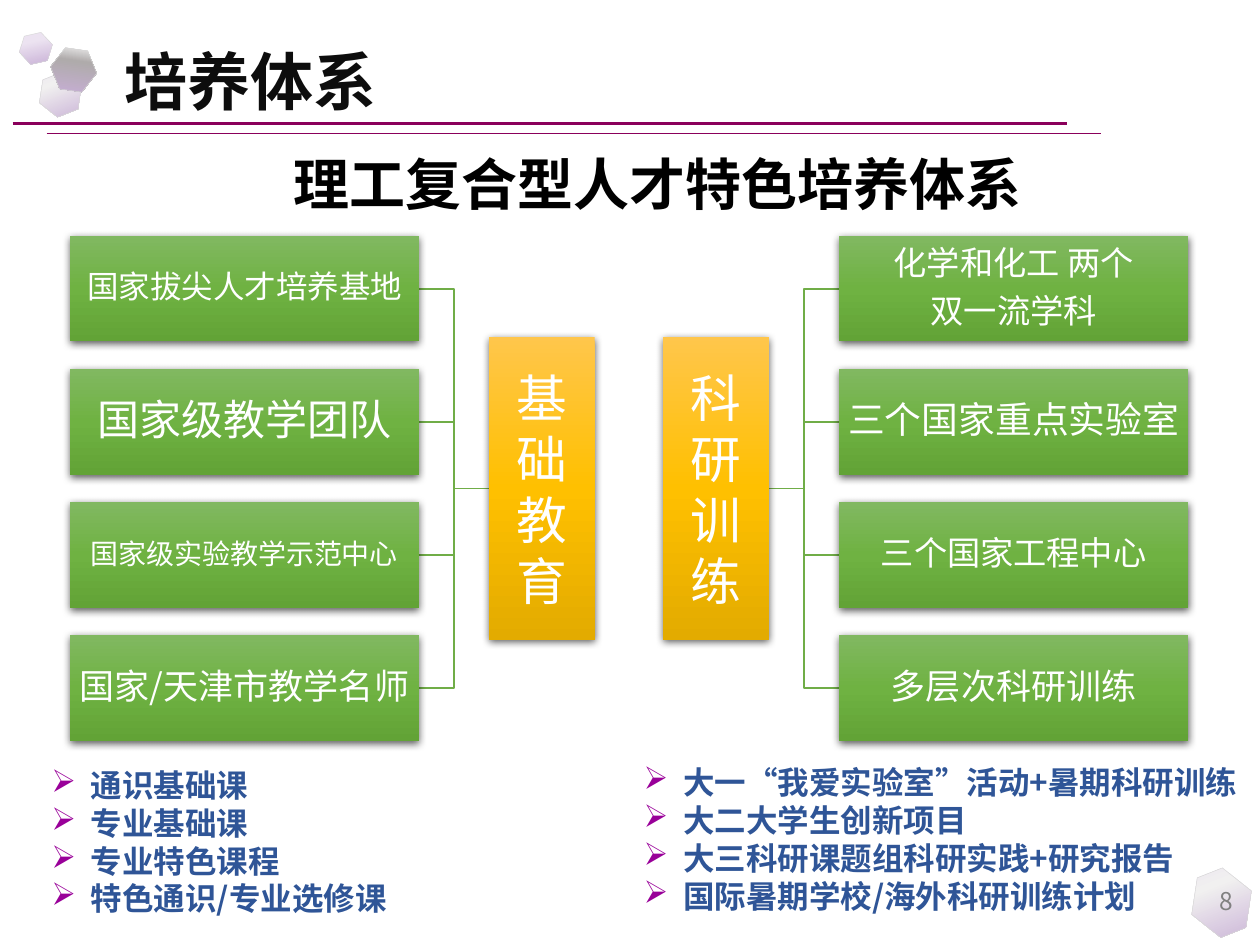
"""Build the training system slide."""
from dataclasses import dataclass

import pptx
import pptx.dml.color
import pptx.enum.shapes
import pptx.enum.text
import pptx.oxml
import pptx.oxml.ns
import pptx.util
from lxml import etree

Pt = pptx.util.Pt
RGB = pptx.dml.color.RGBColor
qn = pptx.oxml.ns.qn
PP_ALIGN = pptx.enum.text.PP_ALIGN
ANCHOR = pptx.enum.text.MSO_ANCHOR
SHAPE = pptx.enum.shapes.MSO_SHAPE

FONT = "Noto Sans CJK SC"
WHITE = RGB(0xFF, 0xFF, 0xFF)
BLACK = RGB(0x00, 0x00, 0x00)
TITLE_INK = RGB(0x0D, 0x0D, 0x0D)
NUMBER_GREY = RGB(0x80, 0x80, 0x80)
PLUM = RGB(0x8A, 0x00, 0x5B)
BULLET_PURPLE = RGB(0x99, 0x00, 0x99)
COURSE_BLUE = RGB(0x2F, 0x55, 0x97)
BRANCH_GREEN = RGB(0x70, 0xAD, 0x47)
HEXAGON_EDGE = RGB(0xD7, 0xD7, 0xD7)
LILAC = RGB(0xEC, 0xE3, 0xF1)
MIST = RGB(0xF1, 0xF0, 0xF0)
VIOLET = RGB(0xC7, 0xAE, 0xD5)
GREEN_STOPS = ((0, RGB(0x81, 0xB8, 0x61)), (50, RGB(0x6F, 0xB2, 0x42)), (100, RGB(0x62, 0xA3, 0x36)))
GOLD_STOPS = ((0, RGB(0xFF, 0xC6, 0x4B)), (50, RGB(0xFF, 0xC0, 0x00)), (100, RGB(0xE3, 0xAB, 0x00)))
PALE_STOPS = ((0, LILAC), (33, MIST), (100, VIOLET))
LILAC_STOPS = ((0, LILAC), (33, LILAC), (100, VIOLET))
GREY_STOPS = ((0, RGB(0xF5, 0xF5, 0xF5)), (33, RGB(0xAF, 0xAB, 0xAB)), (100, VIOLET))

CARD_TOP, CARD_PITCH = 134.7, 76.1
CARD_WIDTH, CARD_HEIGHT = 199.5, 60.5
PILLAR_WIDTH, PILLAR_HEIGHT = 60.5, 172.8
SPINE_Y = CARD_TOP + (3 * CARD_PITCH + CARD_HEIGHT) / 2


@dataclass
class Hexagon:
    left: float
    top: float
    width: float
    height: float
    rotation: float
    stops: tuple


@dataclass
class Card:
    lines: list[str]
    size: float


@dataclass
class Branch:
    pillar: str
    pillar_left: float
    card_left: float
    cards: list[Card]
    courses: list[str]
    courses_left: float
    courses_top: float


HEXAGONS = [
    Hexagon(679.7, 497.5, 36.7, 36.7, 338.5, PALE_STOPS),
    Hexagon(21.6, 42.5, 25.9, 23, 338.5, PALE_STOPS),
    Hexagon(10.8, 19.4, 19.4, 16.6, 347.2, LILAC_STOPS),
    Hexagon(28.8, 28.1, 26.6, 23.8, 8.1, GREY_STOPS),
]

BRANCHES = [
    Branch("基础教育", 279.4, 40, [
        Card(["国家拔尖人才培养基地"], 18),
        Card(["国家级教学团队"], 24),
        Card(["国家级实验教学示范中心"], 16),
        Card(["国家/天津市教学名师"], 20),
    ], ["通识基础课", "专业基础课", "专业特色课程", "特色通识/专业选修课"], 22.3, 434.2),
    Branch("科研训练", 378.9, 479.5, [
        Card(["化学和化工 两个", "双一流学科"], 19),
        Card(["三个国家重点实验室"], 21),
        Card(["三个国家工程中心"], 19),
        Card(["多层次科研训练"], 20),
    ], ["大一“我爱实验室”活动+暑期科研训练", "大二大学生创新项目",
        "大三科研课题组科研实践+研究报告", "国际暑期学校/海外科研训练计划"], 360.7, 432.7),
]


def write(shape, lines: list[str], size: float, color: RGB, align=PP_ALIGN.LEFT,
          bold: bool = False, anchor=ANCHOR.TOP, inset: float | None = None,
          bullet: bool = False) -> list:
    frame = shape.text_frame
    frame.word_wrap = True
    frame.auto_size = pptx.enum.text.MSO_AUTO_SIZE.NONE
    frame.vertical_anchor = anchor
    if inset is not None:
        frame.margin_left = frame.margin_right = Pt(inset)
        frame.margin_top = frame.margin_bottom = Pt(inset)
    frame.text = "\n".join(lines)
    for paragraph in frame.paragraphs:
        paragraph.alignment = align
        if bullet:
            add_bullet(paragraph)
        font = paragraph.font
        font.name, font.size, font.bold = FONT, Pt(size), bold
        font.color.rgb = color
        latin = font._element.find(qn("a:latin"))
        east_asian = etree.Element(qn("a:ea"), typeface=FONT)
        latin.addnext(east_asian)
    return list(frame.paragraphs)


def add_bullet(paragraph) -> None:
    properties = paragraph._p.get_or_add_pPr()
    properties.set("marL", str(Pt(22.5)))
    properties.set("indent", str(-Pt(22.5)))
    bullet_color = etree.SubElement(properties, qn("a:buClr"))
    etree.SubElement(bullet_color, qn("a:srgbClr"), val=str(BULLET_PURPLE))
    etree.SubElement(properties, qn("a:buChar"), char="➢")


def add_text(slide, left: float, top: float, width: float, height: float):
    return slide.shapes.add_textbox(Pt(left), Pt(top), Pt(width), Pt(height))


def add_gradient_shape(slide, kind, left: float, top: float, width: float, height: float, stops: tuple):
    shape = slide.shapes.add_shape(kind, Pt(left), Pt(top), Pt(width), Pt(height))
    shape.shadow.inherit = False
    shape.fill.gradient()
    shape.fill.gradient_angle = 270
    stop_list = shape._element.spPr.find(".//" + qn("a:gsLst"))
    stop_list.clear()
    for position, color in stops:
        stop = etree.SubElement(stop_list, qn("a:gs"), pos=str(position * 1000))
        etree.SubElement(stop, qn("a:srgbClr"), val=str(color))
    return shape


def add_panel(slide, left: float, top: float, width: float, height: float, stops: tuple):
    panel = add_gradient_shape(slide, SHAPE.RECTANGLE, left, top, width, height, stops)
    panel.line.fill.background()
    effects = panel._element.spPr.find(qn("a:effectLst"))
    shadow = etree.SubElement(effects, qn("a:outerShdw"), blurRad=str(Pt(4.5)),
                              dist=str(Pt(1.5)), dir="5400000", algn="ctr", rotWithShape="0")
    shade = etree.SubElement(shadow, qn("a:srgbClr"), val=str(BLACK))
    etree.SubElement(shade, qn("a:alpha"), val="63000")
    return panel


def add_hexagon(slide, hexagon: Hexagon) -> None:
    shape = add_gradient_shape(slide, SHAPE.HEXAGON, hexagon.left, hexagon.top,
                               hexagon.width, hexagon.height, hexagon.stops)
    shape.adjustments[0] = 0.29
    shape.rotation = hexagon.rotation
    shape.line.color.rgb = HEXAGON_EDGE
    shape.line.width = Pt(0.25)


def add_rule(slide, left: float, right: float, y: float, weight: float) -> None:
    rule = slide.shapes.add_connector(pptx.enum.shapes.MSO_CONNECTOR.STRAIGHT,
                                      Pt(left), Pt(y), Pt(right), Pt(y))
    rule.line.color.rgb = PLUM
    rule.line.width = Pt(weight)
    etree.SubElement(rule._element.spPr, qn("a:effectLst"))


def add_elbow(slide, start_x: float, end_x: float, end_y: float) -> None:
    middle = (start_x + end_x) / 2
    builder = slide.shapes.build_freeform(Pt(start_x), Pt(SPINE_Y))
    corners = [(middle, SPINE_Y), (middle, end_y), (end_x, end_y)]
    builder.add_line_segments([(Pt(x), Pt(y)) for x, y in corners], close=False)
    elbow = builder.convert_to_shape()
    elbow.shadow.inherit = False
    elbow.fill.background()
    elbow.line.color.rgb = BRANCH_GREEN
    elbow.line.width = Pt(1)


def add_branch(slide, branch: Branch) -> None:
    cards_on_left = branch.card_left < branch.pillar_left
    start_x = branch.pillar_left + (0 if cards_on_left else PILLAR_WIDTH)
    end_x = branch.card_left + (CARD_WIDTH if cards_on_left else 0)
    for row, card in enumerate(branch.cards):
        top = CARD_TOP + row * CARD_PITCH
        add_elbow(slide, start_x, end_x, top + CARD_HEIGHT / 2)
        panel = add_panel(slide, branch.card_left, top, CARD_WIDTH, CARD_HEIGHT, GREEN_STOPS)
        for paragraph in write(panel, card.lines, card.size, WHITE, PP_ALIGN.CENTER,
                               anchor=ANCHOR.MIDDLE, inset=1):
            paragraph.line_spacing = 0.9
            paragraph.space_after = Pt(round(card.size * 0.35, 1))
    pillar = add_panel(slide, branch.pillar_left, SPINE_Y - PILLAR_HEIGHT / 2,
                       PILLAR_WIDTH, PILLAR_HEIGHT, GOLD_STOPS)
    write(pillar, list(branch.pillar), 29, WHITE, PP_ALIGN.CENTER, anchor=ANCHOR.MIDDLE)
    courses = add_text(slide, branch.courses_left, branch.courses_top, 409, 94.3)
    write(courses, branch.courses, 18, COURSE_BLUE, bold=True, bullet=True)


def main() -> None:
    deck = pptx.Presentation()
    deck.slide_width, deck.slide_height = Pt(720), Pt(540)
    slide = deck.slides.add_slide(deck.slide_layouts[5])
    for hexagon in HEXAGONS:
        add_hexagon(slide, hexagon)
    add_rule(slide, 7.2, 609.8, 70.6, 2.25)
    add_rule(slide, 26.6, 629.3, 76.3, 0.5)
    title = slide.shapes.title
    title.left, title.top, title.width, title.height = Pt(64), Pt(20.9), Pt(548), Pt(51)
    write(title, ["培养体系"], 36, TITLE_INK, bold=True)
    heading = add_text(slide, 160.6, 82, 459.4, 46)
    write(heading, ["理工复合型人才特色培养体系"], 32, BLACK, PP_ALIGN.JUSTIFY, bold=True)
    for branch in BRANCHES:
        add_branch(slide, branch)
    page_number = add_text(slide, 550, 500.4, 162, 28.8)
    write(page_number, ["8"], 14, NUMBER_GREY, PP_ALIGN.RIGHT, anchor=ANCHOR.MIDDLE)
    deck.save("out.pptx")


if __name__ == "__main__":
    main()
